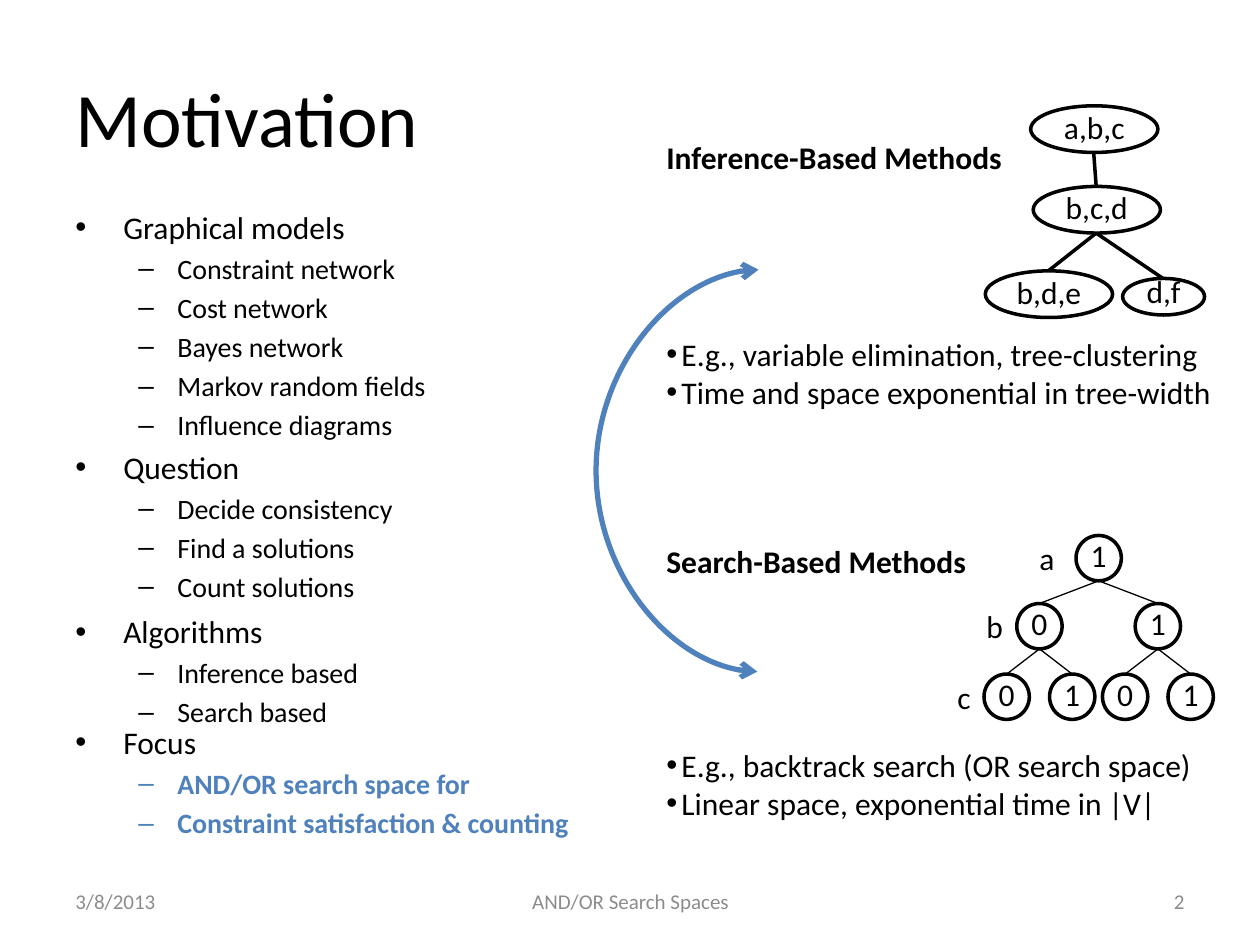
import lxml.etree
import pptx
import pptx.dml.color
import pptx.enum.shapes
import pptx.enum.text
import pptx.oxml.ns
import pptx.util

THEME = {
    "font": "Calibri",
    "ink": "000000", "paper": "FFFFFF", "accent": "4F81BD", "muted": "8C8C8C",
    "title": 44, "heading": 18, "detail": 16, "footer": 12,
}
PX = 9144

OUTLINES = [
    (160, 335, [
        ("Graphical models", ["Constraint network", "Cost network", "Bayes network",
                              "Markov random fields", "Influence diagrams"]),
        ("Question", ["Decide consistency", "Find a solutions", "Count solutions"]),
    ], {}),
    (481, 104, [("Algorithms", ["Inference based", "Search based"])], {}),
    (569, 125, [("Focus", ["AND/OR search space for", "Constraint satisfaction & counting"])],
     {"color": "accent", "bold": True}),
]
METHODS = [
    ("Inference-Based Methods", 105, 261,
     ["E.g., variable elimination, tree-clustering", "Time and space exponential in tree-width"]),
    ("Search-Based Methods", 425, 587,
     ["E.g., backtrack search (OR search space)", "Linear space, exponential time in |V|"]),
]
FOOTERS = [("3/8/2013", 50, 233, "LEFT"), ("AND/OR Search Spaces", 342, 317, "CENTER"),
           ("2", 717, 233, "RIGHT")]
CLUSTERS = {
    "d,f": (891, 221, 65, 29), "a,b,c": (818, 84, 101, 37),
    "b,c,d": (820, 148, 101, 37), "b,d,e": (782, 215, 101, 37),
}
CLUSTER_EDGES = [("a,b,c", "b,c,d"), ("b,c,d", "b,d,e"), ("b,c,d", "d,f")]
TREE_LEVELS = [
    (425, [(854, "1")], ("a", 815, 423)),
    (479, [(807, "0"), (901, "1")], ("b", 773, 477)),
    (535, [(781, "0"), (833, "1"), (875, "0"), (927, "1")], ("c", 750, 533)),
]
NODE_SIZE = 36

presentation = pptx.Presentation()
presentation.slide_width = 1000 * PX
presentation.slide_height = 750 * PX
slide = presentation.slides.add_slide(presentation.slide_layouts[6])


def px(*lengths):
    return [length * PX for length in lengths]


def rgb(name):
    return pptx.dml.color.RGBColor.from_string(THEME[name])


def add_element(parent, tag, **attributes):
    element = lxml.etree.SubElement(parent, pptx.oxml.ns.qn(tag))
    for name, value in attributes.items():
        element.set(name, str(value))
    return element


def add_text(frame, text, size="heading", color="ink", bold=False, align="LEFT",
             bullet=None, margin=0, hanging=0, spacing=0):
    paragraph = frame.paragraphs[0]
    if paragraph.runs:
        paragraph = frame.add_paragraph()
    paragraph.alignment = getattr(pptx.enum.text.PP_ALIGN, align)
    run = paragraph.add_run()
    run.text = text
    run.font.name = THEME["font"]
    run.font.size = pptx.util.Pt(THEME[size])
    run.font.bold = bold
    run.font.color.rgb = rgb(color)
    if bullet:
        properties = paragraph._p.get_or_add_pPr()
        properties.set("marL", str(margin * PX))
        properties.set("indent", str(-hanging * PX))
        before = add_element(properties, "a:spcBef")
        add_element(before, "a:spcPct", val=spacing * 1000)
        add_element(properties, "a:buFont", typeface="Arial")
        add_element(properties, "a:buChar", char=bullet)


def add_frame(left, top, width, height, anchor="TOP"):
    frame = slide.shapes.add_textbox(*px(left, top, width, height)).text_frame
    frame.word_wrap = True
    frame.vertical_anchor = getattr(pptx.enum.text.MSO_ANCHOR, anchor)
    return frame


def add_node(text, left, top, width, height):
    shape = slide.shapes.add_shape(pptx.enum.shapes.MSO_SHAPE.OVAL,
                                   *px(left, top, width, height))
    shape.shadow.inherit = False
    shape.fill.solid()
    shape.fill.fore_color.rgb = rgb("paper")
    shape.line.color.rgb = rgb("ink")
    shape.line.width = pptx.util.Pt(2)
    frame = shape.text_frame
    frame.margin_left = frame.margin_right = frame.margin_top = frame.margin_bottom = 0
    frame.vertical_anchor = pptx.enum.text.MSO_ANCHOR.BOTTOM
    add_text(frame, text, align="CENTER")


def add_line(kind, start, end, weight, color="ink"):
    connector = slide.shapes.add_connector(
        getattr(pptx.enum.shapes.MSO_CONNECTOR, kind), *px(*start, *end))
    connector.line.color.rgb = rgb(color)
    connector.line.width = pptx.util.Pt(weight)
    add_element(connector._element.spPr, "a:effectLst")
    return connector


def add_edge(parent, child, weight):
    left, top, width, height = parent
    add_line("STRAIGHT", (left + width // 2, top + height),
             (child[0] + child[2] // 2, child[1]), weight)


def add_swing(left, top, bottom, reach):
    connector = add_line("CURVE", (left, top), (left + 1, bottom), 3, "accent")
    properties = connector._element.spPr
    properties.xfrm.set("rot", "10800000")
    properties.xfrm.set("flipV", "1")
    guides = properties.find(pptx.oxml.ns.qn("a:prstGeom")).get_or_add_avLst()
    add_element(guides, "a:gd", name="adj1", fmla=f"val {reach * 100000}")
    outline = connector.line._get_or_add_ln()
    for end in ("a:headEnd", "a:tailEnd"):
        add_element(outline, end, type="arrow")


add_text(add_frame(50, 30, 900, 125, "MIDDLE"), "Motivation", size="title")

for top, height, sections, emphasis in OUTLINES:
    frame = add_frame(50, top, 499, height)
    for heading, details in sections:
        add_text(frame, heading, bullet="•", margin=38, hanging=38, spacing=20)
        for detail in details:
            add_text(frame, detail, size="detail", bullet="–", margin=81, hanging=31,
                     spacing=20, **emphasis)

for heading, heading_top, notes_top, notes in METHODS:
    add_text(add_frame(519, heading_top, 302, 40), heading, bold=True)
    frame = add_frame(519, notes_top, 486, 71)
    for note in notes:
        add_text(frame, note, bullet="•", margin=12, hanging=12)

for text, left, width, align in FOOTERS:
    add_text(add_frame(left, 695, width, 40, "MIDDLE"), text,
             size="footer", color="muted", align=align)

for text, box in CLUSTERS.items():
    add_node(text, *box)
for parent, child in CLUSTER_EDGES:
    add_edge(CLUSTERS[parent], CLUSTERS[child], 2)

parents = []
for top, nodes, (variable, label_left, label_top) in TREE_LEVELS:
    add_text(add_frame(label_left, label_top, 50, 40), variable)
    boxes = [(left, top, NODE_SIZE, NODE_SIZE) for left, value in nodes]
    for index, (box, (left, value)) in enumerate(zip(boxes, nodes)):
        add_node(value, *box)
        if parents:
            add_edge(parents[index // 2], box, 0.75)
    parents = boxes

add_swing(601, 214, 533, 131)

presentation.save("out.pptx")
